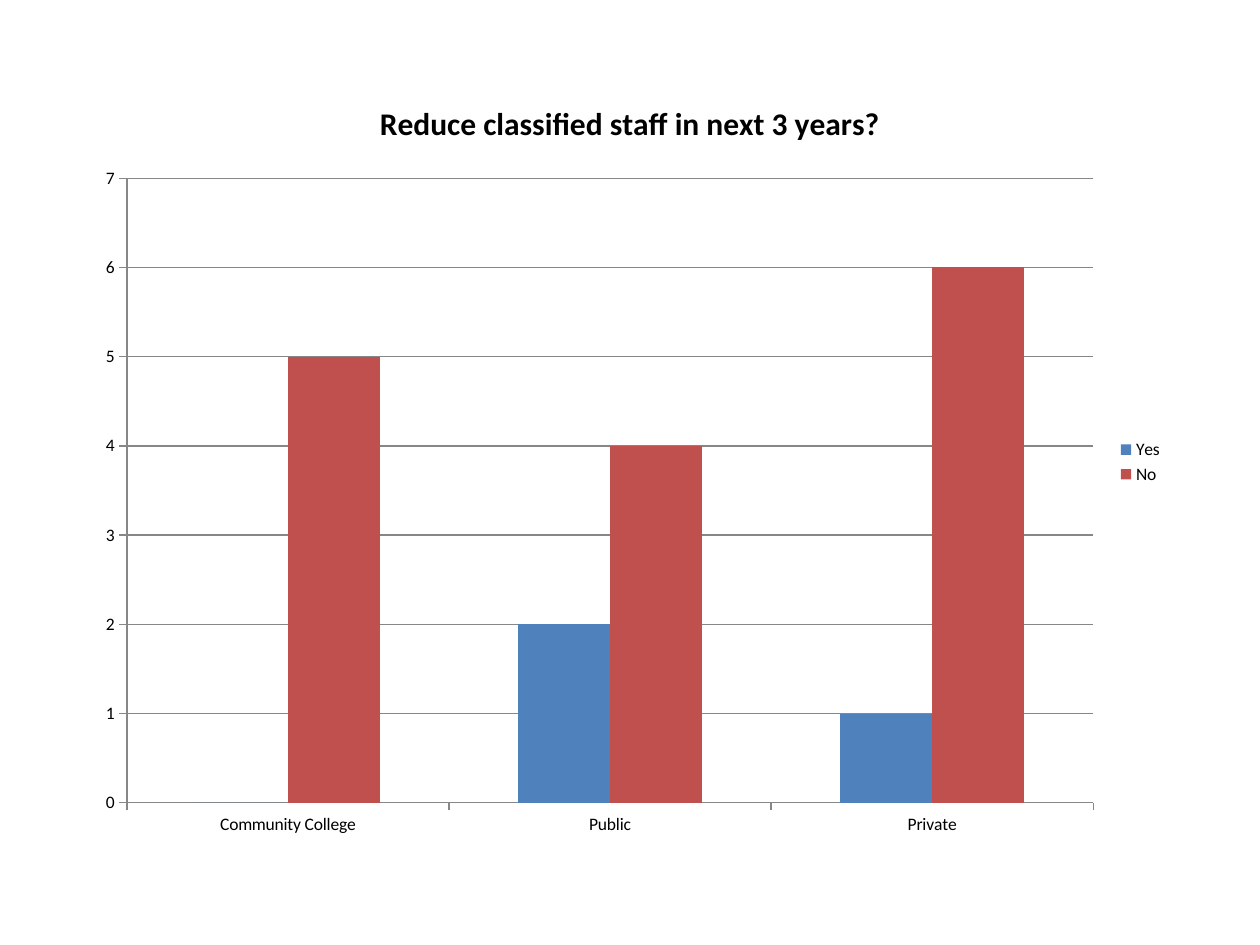
from pptx import Presentation
from pptx.chart.data import CategoryChartData
from pptx.dml.color import RGBColor
from pptx.enum.chart import XL_CHART_TYPE as ChartType, XL_LEGEND_POSITION as LegendPos, XL_TICK_MARK as Tick
from pptx.util import Pt

COLORS = {"Yes": "4F81BD", "No": "C0504D", "text": "000000", "line": "878787"}
VALUES = {"Yes": (0, 2, 1), "No": (5, 4, 6)}


def color(name):
    return RGBColor.from_string(COLORS[name])


def style_font(font, size, bold=False):
    font.name = "Calibri"
    font.size = Pt(size)
    font.bold = bold
    font.color.rgb = color("text")


def style_line(line):
    line.color.rgb = color("line")
    line.width = Pt(0.75)


def add_staff_chart(s, left, top, width, height):
    data = CategoryChartData(number_format="General")
    data.categories = ["Community College", "Public", "Private"]
    for name, values in VALUES.items():
        data.add_series(name, values)
    chart = s.shapes.add_chart(ChartType.COLUMN_CLUSTERED, Pt(left), Pt(top),
                               Pt(width), Pt(height), data).chart
    style_font(chart.font, 10)

    chart.has_title = True
    chart.chart_title.include_in_layout = False
    p = chart.chart_title.text_frame.paragraphs[0]
    p.text = "Reduce classified staff in next 3 years?"
    style_font(p.font, 18, bold=True)

    chart.has_legend = True
    chart.legend.position = LegendPos.RIGHT
    chart.legend.include_in_layout = False

    plot = chart.plots[0]
    plot.gap_width = 150
    plot.overlap = 0
    plot.vary_by_categories = False
    for series in plot.series:
        series.format.fill.solid()
        series.format.fill.fore_color.rgb = color(series.name)

    for axis in (chart.category_axis, chart.value_axis):
        axis.major_tick_mark = Tick.OUTSIDE
        axis.minor_tick_mark = Tick.NONE
        style_line(axis.format.line)
    axis = chart.value_axis
    axis.minimum_scale, axis.maximum_scale, axis.major_unit = 0, 7, 1
    axis.has_major_gridlines = True
    style_line(axis.major_gridlines.format.line)


def main():
    prs = Presentation()
    prs.slide_width, prs.slide_height = Pt(720), Pt(540)
    s = prs.slides.add_slide(prs.slide_layouts[6])
    add_staff_chart(s, 48, 42, 624, 444)
    prs.save("out.pptx")


if __name__ == "__main__":
    main()
